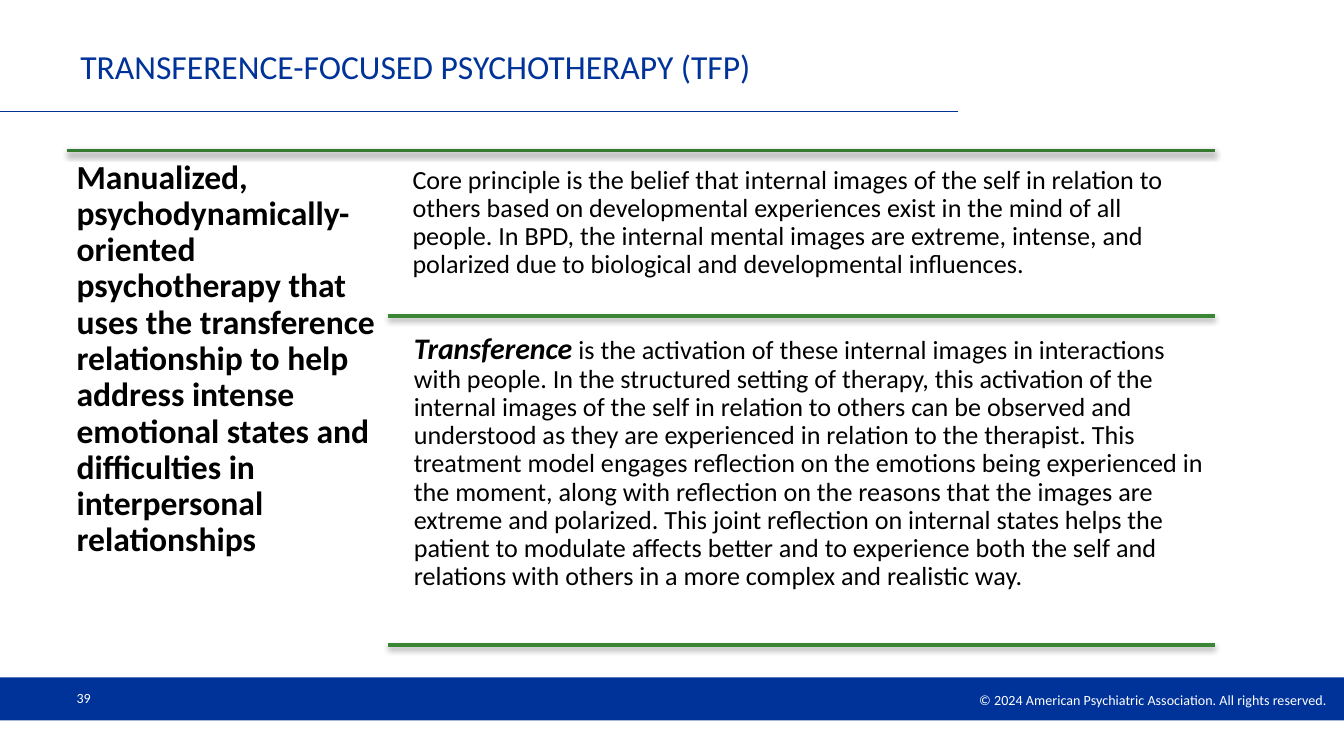
from lxml import etree
from pptx import Presentation
from pptx.dml.color import RGBColor
from pptx.enum.shapes import MSO_CONNECTOR as Connector, MSO_SHAPE as Shape
from pptx.enum.text import MSO_ANCHOR as Anchor, PP_ALIGN as Align
from pptx.oxml import parse_xml
from pptx.oxml.ns import nsdecls, qn
from pptx.util import Inches, Pt

COLORS = {"blue": "003399", "white": "FFFFFF", "black": "000000",
          "dark_green": "367A2F", "green": "3B8634"}
FONT = "Calibri"

TITLE = "TRANSFERENCE-FOCUSED PSYCHOTHERAPY (TFP)"
SUMMARY = ("Manualized, psychodynamically-oriented psychotherapy that uses the "
           "transference relationship to help address intense emotional states and "
           "difficulties in interpersonal relationships")
PRINCIPLE = ("Core principle is the belief that internal images of the self in relation to "
             "others based on developmental experiences exist in the mind of all people. "
             "In BPD, the internal mental images are extreme, intense, and polarized due to "
             "biological and developmental influences.")
TERM = "Transference"
EXPLANATION = (" is the activation of these internal images in interactions with people. "
               "In the structured setting of therapy, this activation of the internal images "
               "of the self in relation to others can be observed and understood as they are "
               "experienced in relation to the therapist. This treatment model engages "
               "reflection on the emotions being experienced in the moment, along with "
               "reflection on the reasons that the images are extreme and polarized. This "
               "joint reflection on internal states helps the patient to modulate affects "
               "better and to experience both the self and relations with others in a more "
               "complex and realistic way.")
PAGE_NUMBER = "39"
COPYRIGHT = "© 2024 American Psychiatric Association. All rights reserved."

SLIDE_WIDTH = 10
SLIDE_HEIGHT = SLIDE_WIDTH * 9 / 16
LEFT, RIGHT = 0.5, 9.04
DETAIL_LEFT, DETAIL_WIDTH = 3.01, 6.03
TOP_RULE, MIDDLE_RULE, BOTTOM_RULE = 1.12, 2.35, 4.8
RULE_GAP = 0.06
RULES = [(LEFT, TOP_RULE, "dark_green"),
         (DETAIL_LEFT - 0.12, MIDDLE_RULE, "green"),
         (DETAIL_LEFT - 0.12, BOTTOM_RULE, "green")]

SHADOW = (f'<a:effectLst {nsdecls("a")}>'
          '<a:outerShdw blurRad="39400" dist="20300" dir="5400000" rotWithShape="0">'
          '<a:srgbClr val="000000"><a:alpha val="38000"/></a:srgbClr>'
          '</a:outerShdw></a:effectLst>')


def rgb(name):
    return RGBColor.from_string(COLORS[name])


def add_text(slide, box, runs, color="black", anchor=Anchor.TOP, align=Align.LEFT,
             insets=(0.1, 0.05, 0.1, 0.05), spacing=None):
    frame = slide.shapes.add_textbox(*map(Inches, box)).text_frame
    frame.word_wrap = True
    frame.vertical_anchor = anchor
    (frame.margin_left, frame.margin_top,
     frame.margin_right, frame.margin_bottom) = map(Inches, insets)
    paragraph = frame.paragraphs[0]
    paragraph.alignment = align
    if spacing:
        paragraph.line_spacing = spacing
    for words, size, bold, italic in runs:
        run = paragraph.add_run()
        run.text = words
        run.font.name = FONT
        run.font.size = Pt(size)
        run.font.bold = bold
        run.font.italic = italic
        run.font.color.rgb = rgb(color)


def add_rule(slide, start, end, y, color, weight, shadow=False):
    rule = slide.shapes.add_connector(
        Connector.STRAIGHT, Inches(start), Inches(y), Inches(end), Inches(y))
    rule.line.color.rgb = rgb(color)
    rule.line.width = Pt(weight)
    properties = rule._element.spPr
    if shadow:
        properties.append(parse_xml(SHADOW))
    else:
        etree.SubElement(properties, qn("a:effectLst"))


def main():
    deck = Presentation()
    deck.slide_width, deck.slide_height = Inches(SLIDE_WIDTH), Inches(SLIDE_HEIGHT)
    slide = deck.slides.add_slide(deck.slide_layouts[6])

    footer = slide.shapes.add_shape(
        Shape.RECTANGLE, Inches(0), Inches(5.04), Inches(SLIDE_WIDTH), Inches(0.32))
    footer.shadow.inherit = False
    footer.fill.solid()
    footer.fill.fore_color.rgb = rgb("blue")
    footer.line.fill.background()

    add_rule(slide, 0, 7.13, 0.83, "blue", 0.75)
    add_text(slide, (5.63, 5.09, 4.37, 0.23), [(COPYRIGHT, 7.5, False, False)],
             color="white", anchor=Anchor.MIDDLE, align=Align.RIGHT,
             insets=(0.1, 0.05, 0.13, 0.05))
    add_text(slide, (LEFT, 5.04, 2.33, 0.3), [(PAGE_NUMBER, 7.5, False, False)],
             color="white", anchor=Anchor.MIDDLE, insets=(0.07, 0.04, 0.07, 0.04))
    add_text(slide, (LEFT, 0.25, 6.63, 0.48), [(TITLE, 18, False, False)],
             color="blue", anchor=Anchor.MIDDLE)

    for start, y, color in RULES:
        add_rule(slide, start, RIGHT, y, color, 2, shadow=True)

    principle_top = TOP_RULE + RULE_GAP
    explanation_top = MIDDLE_RULE + RULE_GAP
    panels = [
        ((LEFT, TOP_RULE, 2.39, 3.75), 0.07, [(SUMMARY, 18, True, False)]),
        ((DETAIL_LEFT, principle_top, DETAIL_WIDTH, MIDDLE_RULE - principle_top), 0.06,
         [(PRINCIPLE, 14, False, False)]),
        ((DETAIL_LEFT, explanation_top, DETAIL_WIDTH, BOTTOM_RULE - explanation_top), 0.07,
         [(TERM, 16, True, True), (EXPLANATION, 14, False, False)]),
    ]
    for box, inset, runs in panels:
        add_text(slide, box, runs, insets=(inset,) * 4, spacing=0.9)

    deck.save("out.pptx")


if __name__ == "__main__":
    main()
